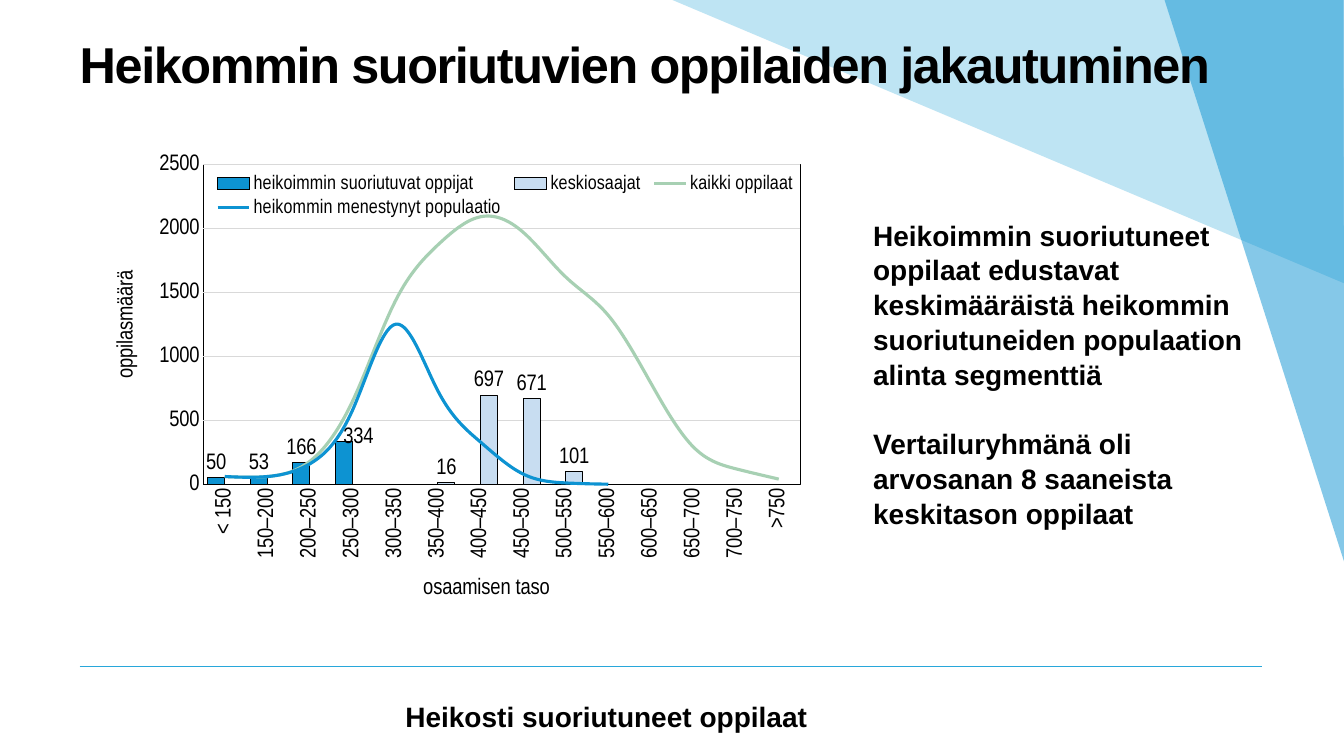
from pptx import Presentation
from pptx.chart.data import CategoryChartData
from pptx.dml.color import RGBColor
from pptx.enum.chart import XL_CHART_TYPE, XL_LABEL_POSITION, XL_LEGEND_POSITION, XL_TICK_MARK
from pptx.enum.shapes import MSO_CONNECTOR
from pptx.enum.text import MSO_ANCHOR, PP_ALIGN
from pptx.oxml import parse_xml
from pptx.oxml.ns import nsdecls, qn
from pptx.util import Inches, Pt

COLUMNS = XL_CHART_TYPE.COLUMN_CLUSTERED
OUTSIDE_END = XL_LABEL_POSITION.OUTSIDE_END
LEGEND_BOTTOM = XL_LEGEND_POSITION.BOTTOM
NO_TICK = XL_TICK_MARK.NONE
STRAIGHT = MSO_CONNECTOR.STRAIGHT
TOP, LEFT = MSO_ANCHOR.TOP, PP_ALIGN.LEFT

BLACK = RGBColor(0x00, 0x00, 0x00)
GRID = RGBColor(0xD9, 0xD9, 0xD9)
SKY = RGBColor(0x28, 0xA7, 0xDA)
BLUE = RGBColor(0x0D, 0x93, 0xD2)
PALE = RGBColor(0xC8, 0xDD, 0xF1)
GREEN = RGBColor(0xA7, 0xD0, 0xB3)

CHART_FONT = {"name": "Arial Narrow", "size": Pt(16), "bold": False}
BODY_FONT = {"name": "Arial", "size": Pt(20), "bold": True}
TITLE_FONT = {**BODY_FONT, "size": Pt(36)}

LEVELS = ["< 150", *(f"{n}–{n + 50}" for n in range(150, 750, 50)), ">750"]
BARS = [
    ("heikoimmin suoriutuvat oppijat", [50, 53, 166, 334] + [None] * 10, BLUE),
    ("keskiosaajat", [None] * 5 + [16, 697, 671, 101] + [None] * 5, PALE),
]
CURVES = [
    ("kaikki oppilaat",
     [60, 60, 180, 650, 1430, 1870, 2090, 1970, 1620, 1320, 790, 290, 120, 40], GREEN),
    ("heikommin menestynyt populaatio",
     [60, 60, 160, 580, 1250, 730, 330, 80, 10, 0] + [None] * 4, BLUE),
]


def set_font(font, values):
    for name, value in values.items():
        setattr(font, name, value)
    font.color.rgb = BLACK


def set_line(line, color, width=0.75):
    line.color.rgb = color
    line.width = Pt(width)


def chart_xml(tag, body="", attrs=""):
    return parse_xml(f"<c:{tag} {nsdecls('c', 'a')} {attrs}>{body}</c:{tag}>")


def place(parent, index, x, y, size=None, edge=True, inner=False):
    """Give a chart part a manual position, in fractions of the chart."""
    for old in parent.findall(qn("c:layout")):
        parent.remove(old)
    body = '<c:layoutTarget val="inner"/>' if inner else ""
    if edge:
        body += '<c:xMode val="edge"/><c:yMode val="edge"/>'
    body += f'<c:x val="{x}"/><c:y val="{y}"/>'
    if size:
        body += f'<c:w val="{size[0]}"/><c:h val="{size[1]}"/>'
    parent.insert(index, chart_xml("layout", f"<c:manualLayout>{body}</c:manualLayout>"))


def add_facet(slide, points, color, opacity):
    points = [(Inches(x), Inches(y)) for x, y in points]
    builder = slide.shapes.build_freeform(*points[0])
    builder.add_line_segments(points[1:], close=True)
    sp = builder.convert_to_shape()
    sp.shadow.inherit = False
    sp.line.fill.background()
    sp.fill.solid()
    sp.fill.fore_color.rgb = color
    tint = sp.element.spPr.find(".//" + qn("a:srgbClr"))
    tint.append(parse_xml(f'<a:alpha {nsdecls("a")} val="{opacity * 1000}"/>'))


def add_rule(slide, x1, x2, y):
    rule = slide.shapes.add_connector(STRAIGHT, Inches(x1), Inches(y), Inches(x2), Inches(y))
    set_line(rule.line, SKY, 1)
    rule.element.spPr.append(parse_xml(f'<a:effectLst {nsdecls("a")}/>'))


def fill_text(tf, paragraphs, font, spacing):
    tf.margin_left = tf.margin_right = tf.margin_top = tf.margin_bottom = 0
    tf.word_wrap = True
    tf.vertical_anchor = TOP
    for i, text in enumerate(paragraphs):
        p = tf.add_paragraph() if i else tf.paragraphs[0]
        p.alignment = LEFT
        p.line_spacing = spacing
        p.space_before = Pt(24 if i else 0)
        r = p.add_run()
        r.text = text
        set_font(r.font, font)


def add_text(slide, box, *paragraphs):
    sp = slide.shapes.add_textbox(*map(Inches, box))
    fill_text(sp.text_frame, paragraphs, BODY_FONT, 1.04)


def add_title(slide, box, text):
    title = slide.shapes.title
    title.left, title.top, title.width, title.height = map(Inches, box)
    fill_text(title.text_frame, [text], TITLE_FONT, 0.85)
    title.text_frame.paragraphs[0].runs[0].font._element.set("spc", "-100")
    slide.shapes.element.append(title.element)  # in front of the facets


def format_axis(axis, title, x, y, rotation):
    axis.major_tick_mark = axis.minor_tick_mark = NO_TICK
    set_font(axis.tick_labels.font, CHART_FONT)
    tf = axis.axis_title.text_frame
    tf.text = title
    set_font(tf.paragraphs[0].runs[0].font, CHART_FONT)
    tf._txBody.find(qn("a:bodyPr")).set("rot", str(rotation))
    place(axis.axis_title._element, 1, x, y)


def format_bars(plot):
    plot.vary_by_categories = False
    plot.gap_width = 50
    plot.overlap = 0
    for series, (_, _, color) in zip(plot.series, BARS):
        series.format.fill.solid()
        series.format.fill.fore_color.rgb = color
        set_line(series.format.line, BLACK)
        labels = series.data_labels
        labels.show_value = True
        labels.position = OUTSIDE_END
        set_font(labels.font, CHART_FONT)
    # The 334 label stands clear of the curves
    label = plot.series[0].points[3].data_label
    set_font(label.font, CHART_FONT)
    label.position = OUTSIDE_END
    d_lbl = plot.series[0]._element.find(".//" + qn("c:dLbl"))
    place(d_lbl, 1, 0.02, 0.02, edge=False)


def turn_into_curves(plot):
    """Move the series after the bars to a line plot on the same axes."""
    bar_chart = plot._element
    lines = chart_xml("lineChart", '<c:grouping val="standard"/><c:varyColors val="0"/>')
    for series, (_, _, color) in zip(list(plot.series)[len(BARS):], CURVES):
        set_line(series.format.line, color, 2.25)
        ser = series._element
        for invert in ser.findall(qn("c:invertIfNegative")):
            ser.remove(invert)
        ser.find(qn("c:spPr")).addnext(chart_xml("marker", '<c:symbol val="none"/>'))
        for smooth in ser.findall(qn("c:smooth")):
            ser.remove(smooth)
        ser.append(chart_xml("smooth", attrs='val="1"'))
        lines.append(ser)
    lines.append(chart_xml("marker", attrs='val="1"'))
    for axis_id in bar_chart.findall(qn("c:axId")):
        lines.append(chart_xml("axId", attrs=f'val="{axis_id.get("val")}"'))
    bar_chart.addnext(lines)


def add_distribution(slide, box):
    data = CategoryChartData()
    data.categories = LEVELS
    for name, values, _ in BARS + CURVES:
        data.add_series(name, values)
    chart = slide.shapes.add_chart(COLUMNS, *map(Inches, box), data).chart
    chart.has_title = False
    set_font(chart.font, CHART_FONT)
    plot = chart.plots[0]
    turn_into_curves(plot)
    format_bars(plot)

    # Axes
    levels, counts = chart.category_axis, chart.value_axis
    format_axis(levels, "osaamisen taso", 0.44, 0.89, 0)
    format_axis(counts, "oppilasmäärä", 0.01, 0.26, -5400000)
    chart.element.xpath(".//c:catAx/c:txPr/a:bodyPr")[0].set("rot", "-5400000")
    set_line(levels.format.line, BLACK)
    counts.format.line.fill.background()
    counts.minimum_scale, counts.maximum_scale, counts.major_unit = 0, 2500, 500
    set_line(counts.major_gridlines.format.line, GRID)

    # Plot frame and legend
    plot_area = chart.element.find(".//" + qn("c:plotArea"))
    place(plot_area, 0, 0.14, 0.05, (0.83, 0.66), inner=True)
    plot_area.append(chart_xml("spPr", '<a:noFill/><a:ln w="9525"><a:solidFill>'
                               f'<a:srgbClr val="{BLACK}"/></a:solidFill></a:ln>'))
    chart.has_legend = True
    chart.legend.position = LEGEND_BOTTOM
    chart.legend.include_in_layout = False
    set_font(chart.legend.font, {**CHART_FONT, "size": Pt(14)})
    place(chart.legend._element, 1, 0.15, 0.06, (0.82, 0.11))


def main():
    prs = Presentation()
    prs.slide_width, prs.slide_height = Inches(13.33), Inches(7.5)
    slide = prs.slides.add_slide(prs.slide_layouts[5])

    # Background decoration
    add_rule(slide, 0.79, 12.52, 6.61)
    add_facet(slide, [(6.67, 0), (13.33, 2.81), (13.32, 0)], SKY, 30)
    add_facet(slide, [(11.55, 0), (13.33, 5.57), (13.33, 0)], BLUE, 50)

    # Content
    add_text(slide, (8.66, 2.15, 3.91, 3.03),
             "Heikoimmin suoriutuneet oppilaat edustavat keskimääräistä heikommin "
             "suoriutuneiden populaation alinta segmenttiä",
             "Vertailuryhmänä oli arvosanan 8 saaneista keskitason oppilaat")
    add_text(slide, (4.02, 6.93, 4.14, 0.34), "Heikosti suoriutuneet oppilaat")
    add_distribution(slide, (1.02, 1.39, 7.13, 4.81))
    add_title(slide, (0.79, 0.42, 11.73, 1.31), "Heikommin suoriutuvien oppilaiden jakautuminen")
    prs.save("out.pptx")


if __name__ == "__main__":
    main()
